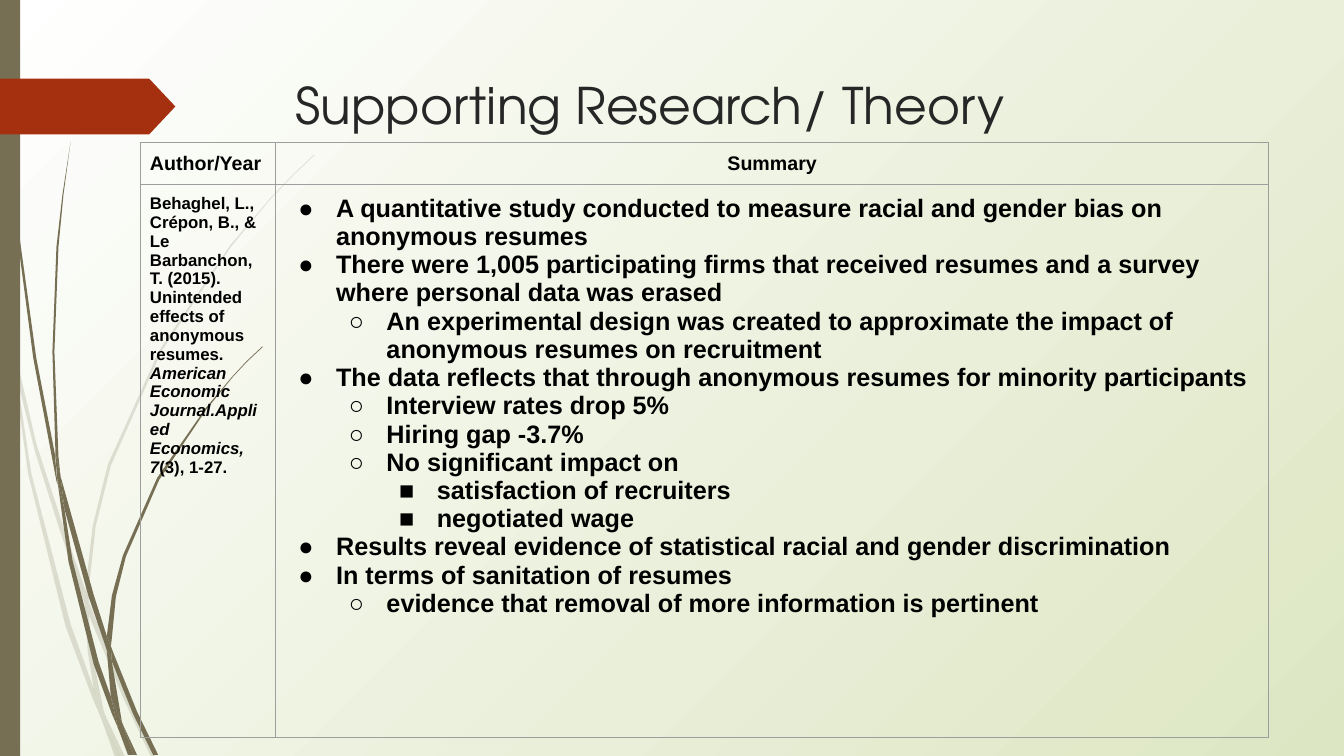
from pptx import Presentation
from pptx.dml.color import RGBColor
from pptx.enum.shapes import MSO_SHAPE
from pptx.enum.text import MSO_ANCHOR, PP_ALIGN
from pptx.oxml import parse_xml
from pptx.oxml.ns import nsdecls, qn
from pptx.util import Cm, Pt

RECT, PENTAGON = MSO_SHAPE.RECTANGLE, MSO_SHAPE.PENTAGON
LEFT, CENTER, TOP = PP_ALIGN.LEFT, PP_ALIGN.CENTER, MSO_ANCHOR.TOP
WIDTH, HEIGHT = 33.87, 19.05
OLIVE, RUST, INK, BLACK, GREY = "766F54", "A53010", "262626", "000000", "9E9E9E"

# Outlines of the grass pieces, on a grid of 2.54 cm
GRID = 2.54
PALE_GRASS = [
    [(0.11, 3.5), (0.09, 3.22), (0, 2.82), (0, 2.99), (0.1, 3.44)],
    [(0.58, 5.22), (0.84, 5.99), (0.85, 5.86), (0.62, 5.2), (0.36, 4.4), (0.14, 3.45),
     (0.17, 3.76), (0.35, 4.49)],
    [(0.92, 6.07), (0.88, 5.96), (0.88, 6.1), (1.23, 6.94), (1.5, 7.51), (1.55, 7.51),
     (1.27, 6.92)],
    [(1.19, 7.51), (1.24, 7.51), (1.05, 7.11)],
    [(0.93, 6.83), (0.7, 6.19), (0.31, 4.69), (0.17, 3.76), (0.11, 3.5), (0.28, 4.7),
     (0.65, 6.21), (0.92, 6.93), (1.01, 7.14), (0.99, 7.07)],
    [(0.84, 5.99), (0.87, 6.46), (0.93, 6.83), (0.96, 6.92), (1.05, 7.11), (1.03, 7.06),
     (0.91, 6.46), (0.88, 6.1), (0.88, 6.08)],
    [(0.88, 5.84), (0.95, 5.22), (1.1, 4.62), (1.6, 3.49), (2.29, 2.45), (2.68, 1.98),
     (2.9, 1.75), (3.12, 1.54), (3.12, 1.53), (2.89, 1.75), (2.68, 1.97), (2.28, 2.44),
     (1.58, 3.48), (1.07, 4.61), (0.92, 5.22), (0.85, 5.84), (0.85, 5.86), (0.88, 5.96)],
    [(1.01, 7.14), (1.14, 7.51), (1.19, 7.51)],
    [(0.88, 6.08), (0.88, 6.1), (0.88, 5.96), (0.85, 5.86), (0.84, 5.99)],
    [(0.96, 6.92), (0.93, 6.83), (0.99, 7.07), (1.01, 7.14), (1.19, 7.51), (1.05, 7.11)],
]
DARK_GRASS = [
    [(0.07, 1.1), (0.17, 2.33), (0.33, 3.55), (0.56, 4.77), (0.57, 4.81), (0.55, 4.57),
     (0.55, 4.53), (0.36, 3.55), (0.19, 2.32), (0.08, 1.09), (0.05, 0.48), (0.04, 0),
     (0.03, 0), (0.04, 0.48)],
    [(0.88, 5.92), (1.06, 6.45), (1.06, 6.33), (1.06, 6.31), (0.93, 5.9), (0.6, 4.72),
     (0.64, 5.05)],
    [(1.13, 6.49), (1.1, 6.41), (1.11, 6.56), (1.32, 7.08), (1.52, 7.49), (1.57, 7.49),
     (1.36, 7.06)],
    [(1.1, 6.91), (0.98, 6.57), (0.72, 5.56), (0.64, 5.05), (0.57, 4.77), (0.68, 5.57),
     (0.93, 6.59), (1.11, 7.08), (1.17, 7.22), (1.16, 7.17)],
    [(0.6, 4.72), (0.58, 4.53), (0.54, 3.49), (0.58, 2.45), (0.63, 1.93), (0.7, 1.41),
     (0.62, 1.93), (0.56, 2.45), (0.52, 3.49), (0.55, 4.49)],
    [(1.33, 7.49), (1.36, 7.49), (1.22, 7.19)],
    [(0.57, 4.77), (0.64, 5.05), (0.6, 4.72), (0.55, 4.49), (0.55, 4.53)],
    [(1.11, 6.33), (1.15, 5.92), (1.25, 5.52), (1.58, 4.76), (2.05, 4.06), (2.31, 3.74),
     (2.45, 3.59), (2.61, 3.44), (2.6, 3.44), (2.45, 3.58), (2.31, 3.73), (2.04, 4.05),
     (1.56, 4.74), (1.22, 5.51), (1.11, 5.91), (1.06, 6.31), (1.1, 6.41)],
    [(1.17, 7.22), (1.27, 7.49), (1.31, 7.49)],
    [(1.06, 6.45), (1.1, 6.91), (1.16, 7.06), (1.22, 7.19), (1.21, 7.16), (1.11, 6.56),
     (1.09, 6.51)],
    [(1.06, 6.45), (1.09, 6.51), (1.11, 6.56), (1.1, 6.41), (1.06, 6.31), (1.06, 6.33)],
    [(1.16, 7.06), (1.1, 6.91), (1.16, 7.17), (1.17, 7.22), (1.3, 7.49), (1.33, 7.49),
     (1.22, 7.19)],
]

CITATION = [
    ("Behaghel, L., Crépon, B., & Le Barbanchon, T. (2015). Unintended effects "
     "of anonymous resumes.", False),
    (" American Economic Journal.Applied Economics, 7", True),
    ("(3), 1-27.", False),
]
FINDINGS = [
    (0, "A quantitative study conducted to measure racial and gender bias on "
        "anonymous resumes"),
    (0, "There were 1,005 participating firms that received resumes and a survey "
        "where personal data was erased"),
    (1, "An experimental design was created to approximate the impact of "
        "anonymous resumes on recruitment"),
    (0, "The data reflects that through anonymous resumes for minority participants"),
    (1, "Interview rates drop 5%"),
    (1, "Hiring gap -3.7%"),
    (1, "No significant impact on"),
    (2, "satisfaction of recruiters"),
    (2, "negotiated wage"),
    (0, "Results reveal evidence of statistical racial and gender discrimination"),
    (0, "In terms of sanitation of resumes"),
    (1, "evidence that removal of more information is pertinent"),
]


def rgb(code):
    return RGBColor.from_string(code)


def paint(shape, color):
    shape.shadow.inherit = False
    shape.fill.solid()
    shape.fill.fore_color.rgb = rgb(color)
    shape.line.fill.background()


def add_run(p, text, size, color=BLACK, **formats):
    r = p.add_run()
    r.text = text
    r.font.color.rgb = rgb(color)
    for name, value in {"name": "Arial", "size": Pt(size), **formats}.items():
        setattr(r.font, name, value)


def add_background(s):
    """White at the top left corner, fading to green."""
    fill = s.background.fill
    fill.gradient()
    for stop, color in zip(fill.gradient_stops, ("FFFFFF", "DDE6C3")):
        stop.color.rgb = rgb(color)
    grad = s.element.find(".//" + qn("a:gradFill"))
    grad.replace(grad.find(qn("a:lin")), parse_xml(
        f'<a:path {nsdecls("a")} path="circle">'
        '<a:fillToRect r="100000" b="100000"/></a:path>'))


def add_grass(s, left, top, outline, alpha):
    points = [(Cm(left + GRID * x), Cm(top + GRID * y)) for x, y in outline]
    builder = s.shapes.build_freeform(*points[0])
    builder.add_line_segments(points[1:], close=True)
    grass = builder.convert_to_shape()
    paint(grass, OLIVE)
    if alpha < 100:
        color = grass.element.spPr.find(".//" + qn("a:srgbClr"))
        color.append(parse_xml(f'<a:alpha {nsdecls("a")} val="{alpha * 1000}"/>'))


def add_decoration(s, left, top, height):
    for outlines, alpha in ((PALE_GRASS, 20), (DARK_GRASS, 100)):
        for outline in outlines:
            add_grass(s, left, top, outline, alpha)
    bar = s.shapes.add_shape(RECT, Cm(left), Cm(top), Cm(0.51), Cm(height))
    paint(bar, OLIVE)
    arrow = s.shapes.add_shape(PENTAGON, Cm(left), Cm(top + 1.98), Cm(4.42), Cm(1.41))
    arrow.adjustments[0] = 0.47
    paint(arrow, RUST)


def add_title(s, left, top, width, height):
    title = s.shapes.title
    box = {"left": left, "top": top, "width": width, "height": height}
    for name, value in box.items():
        setattr(title, name, Cm(value))
    tf = title.text_frame
    tf.word_wrap, tf.vertical_anchor = True, TOP
    p = tf.paragraphs[0]
    p.alignment = LEFT
    add_run(p, "Supporting Research/ Theory", 36, INK, name="TeX Gyre Adventor")


def format_cell(cell):
    cell.fill.background()
    for side in ("left", "right", "top", "bottom"):
        setattr(cell, f"margin_{side}", Cm(0.25))
    tcPr = cell._tc.get_or_add_tcPr()
    for i, side in enumerate("LRTB"):
        tcPr.insert(i, parse_xml(
            f'<a:ln{side} {nsdecls("a")} w="{Pt(0.75)}"><a:solidFill>'
            f'<a:srgbClr val="{GREY}"/></a:solidFill></a:ln{side}>'))


def add_bullet(p, level):
    p.level = level
    pPr = p._p.get_or_add_pPr()
    pPr.set("marL", str(Cm(1.27 * (level + 1))))
    pPr.set("indent", str(Cm(-0.95)))
    for xml in (f'<a:buClr {nsdecls("a")}><a:srgbClr val="{BLACK}"/></a:buClr>',
                f'<a:buFont {nsdecls("a")} typeface="Arial"/>',
                f'<a:buChar {nsdecls("a")} char="{"●○■"[level]}"/>'):
        pPr.append(parse_xml(xml))


def add_research_table(s, left, top, widths, heights):
    table = s.shapes.add_table(2, 2, Cm(left), Cm(top), Cm(sum(widths)),
                               Cm(sum(heights))).table
    table.first_row = table.horz_banding = False
    for column, width in zip(table.columns, widths):
        column.width = Cm(width)
    for row, height in zip(table.rows, heights):
        row.height = Cm(height)
    for cell in table.iter_cells():
        format_cell(cell)

    for i, (heading, align) in enumerate([("Author/Year", LEFT), ("Summary", CENTER)]):
        p = table.cell(0, i).text_frame.paragraphs[0]
        p.alignment = align
        add_run(p, heading, 14, bold=True)
    p = table.cell(1, 0).text_frame.paragraphs[0]
    for text, italic in CITATION:
        add_run(p, text, 12, bold=True, italic=italic)
    tf = table.cell(1, 1).text_frame
    for i, (level, text) in enumerate(FINDINGS):
        p = tf.add_paragraph() if i else tf.paragraphs[0]
        add_bullet(p, level)
        add_run(p, text, 18, bold=True)


def main():
    prs = Presentation()
    prs.slide_width, prs.slide_height = Cm(WIDTH), Cm(HEIGHT)
    s = prs.slides.add_slide(prs.slide_layouts[5])
    add_background(s)
    add_decoration(s, 0, 0, HEIGHT)
    add_title(s, 7.2, 1.73, 24.77, 3.56)
    add_research_table(s, 3.53, 3.59, (3.42, 25.02), (1.06, 13.94))
    prs.save("out.pptx")


if __name__ == "__main__":
    main()
